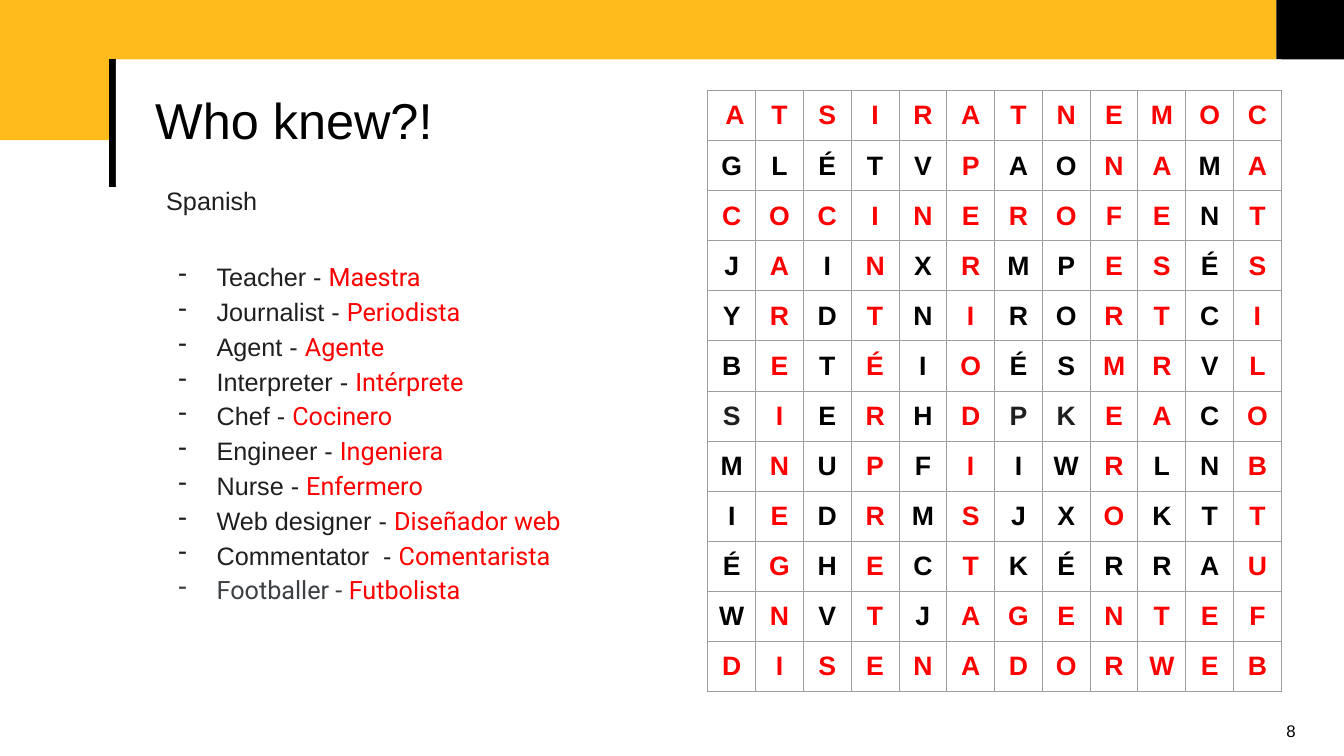
from lxml import etree
from pptx import Presentation
from pptx.dml.color import RGBColor
from pptx.enum.shapes import MSO_CONNECTOR, MSO_SHAPE
from pptx.enum.text import MSO_ANCHOR, PP_ALIGN
from pptx.oxml import parse_xml
from pptx.oxml.ns import nsdecls, qn
from pptx.util import Inches, Pt

RECT = MSO_SHAPE.RECTANGLE
MIDDLE, CENTER, LEFT = MSO_ANCHOR.MIDDLE, PP_ALIGN.CENTER, PP_ALIGN.LEFT
COLORS = {"yellow": "FFBB1C", "black": "000000", "white": "FFFFFF", "red": "FF0000",
          "ink": "1F1F1F", "gray": "3C4043", "grid": "9E9E9E"}

prs = Presentation()
prs.slide_width, prs.slide_height = Inches(13.33), Inches(7.5)
s = prs.slides.add_slide(prs.slide_layouts[6])


def add_text(p, text, size=18, color="black", font="Arial", bold=False):
    r = p.add_run()
    r.text = text
    r.font.size, r.font.name, r.font.bold = Pt(size), font, bold
    r.font.color.rgb = RGBColor.from_string(COLORS[color])


def add_rect(x, y, w, h, color):
    sp = s.shapes.add_shape(RECT, Inches(x), Inches(y), Inches(w), Inches(h))
    sp.shadow.inherit = False
    sp.fill.solid()
    sp.fill.fore_color.rgb = RGBColor.from_string(COLORS[color])
    sp.line.fill.background()
    return sp


# Header band, accent line and corner
add_rect(0, 0, 12.66, 1.39, "yellow")
accent = s.shapes.add_connector(MSO_CONNECTOR.STRAIGHT, Inches(1.12), Inches(0.59),
                                Inches(1.12), Inches(1.86))
accent.line.width = Pt(5)
accent.line.color.rgb = RGBColor.from_string(COLORS["black"])
etree.SubElement(accent._element.spPr, qn("a:effectLst"))
add_rect(12.66, 0, 0.67, 0.59, "black")

# Title
tf = add_rect(1.15, 0.59, 11.56, 1.26, "white").text_frame
tf.word_wrap, tf.vertical_anchor = True, MIDDLE
tf.margin_left = Inches(0.39)
p = tf.paragraphs[0]
p.alignment, p.line_spacing = LEFT, 0.9
add_text(p, "Who knew?!", size=36)

# Slide number
tf = s.shapes.add_textbox(Inches(12.66), Inches(7.1), Inches(0.41), Inches(0.4)).text_frame
tf.word_wrap = True
add_text(tf.paragraphs[0], "8", size=12)

# Word search: letters, then each hidden word as row, column, row step, column step, length
letters = ["ATSIRATNEMOC", "GLÉTVPAONAMA", "COCINEROFENT", "JAINXRMPESÉS",
           "YRDTNIRORTCI", "BETÉIOÉSMRVL", "SIERHDPKEACO", "MNUPFIIWRLNB",
           "IEDRMSJXOKTT", "ÉGHECTKÉRRAU", "WNVTJAGENTEF", "DISENADORWEB"]
hidden_words = [(0, 9, 1, 0, 7), (1, 5, 1, 0, 10), (10, 5, 0, 1, 6), (2, 3, 1, 0, 10),
                (2, 0, 0, 1, 8), (11, 1, -1, 0, 9), (0, 8, 1, 0, 9), (11, 0, 0, 1, 12),
                (0, 11, 0, -1, 12), (10, 11, -1, 0, 10)]
found = {(row + i * dr, col + i * dc)
         for row, col, dr, dc, length in hidden_words for i in range(length)}
found |= {(2, 1)}
ink_cells = {(6, 0), (6, 6), (6, 7)}

n = len(letters)
grid = s.shapes.add_table(n, n, Inches(7.02), Inches(0.9), Inches(5.69), Inches(5.91)).table
grid.first_row = grid.horz_banding = False
for i in range(n):
    grid.columns[i].width = Inches(5.69 / n)
    grid.rows[i].height = Inches(5.91 / n)
for row, line in enumerate(letters):
    for col, letter in enumerate(line):
        cell = grid.cell(row, col)
        cell.margin_left = cell.margin_right = Inches(0.1)
        cell.margin_top = cell.margin_bottom = Inches(0.09)
        cell.vertical_anchor = MIDDLE
        for side in ("lnL", "lnR", "lnT", "lnB"):
            cell._tc.get_or_add_tcPr().append(parse_xml(
                f'<a:{side} {nsdecls("a")} w="{Pt(0.75)}"><a:solidFill>'
                f'<a:srgbClr val="{COLORS["grid"]}"/></a:solidFill></a:{side}>'))
        cell.fill.background()
        color = ("red" if (row, col) in found else
                 "ink" if (row, col) in ink_cells else "black")
        p = cell.text_frame.paragraphs[0]
        p.alignment = CENTER
        add_text(p, " A" if row == col == 0 else letter, size=19, color=color, bold=True)

# Vocabulary list
vocabulary = [("Teacher - ", "Maestra"), ("Journalist - ", "Periodista"),
              ("Agent - ", "Agente"), ("Interpreter - ", "Intérprete"),
              ("Chef - ", "Cocinero"), ("Engineer - ", "Ingeniera"),
              ("Nurse - ", "Enfermero"), ("Web designer - ", "Diseñador web"),
              ("Commentator  - ", "Comentarista"), ("Footballer - ", "Futbolista")]
tf = s.shapes.add_textbox(Inches(1.55), Inches(1.69), Inches(4.15), Inches(4.42)).text_frame
tf.word_wrap = True
tf.margin_left = tf.margin_right = tf.margin_top = tf.margin_bottom = Inches(0.1)
p = tf.paragraphs[0]
p.line_spacing = 1.15
add_text(p, "Spanish", color="ink")
for i, (english, spanish) in enumerate(vocabulary):
    last = i == len(vocabulary) - 1
    color, font = ("gray", "Roboto") if last else ("ink", "Arial")
    p = tf.add_paragraph()
    pPr = p._p.get_or_add_pPr()
    pPr.set("marL", str(Inches(0.5)))
    pPr.set("indent", str(Inches(-0.38)))
    bullet_color = etree.SubElement(pPr, qn("a:buClr"))
    etree.SubElement(bullet_color, qn("a:srgbClr"), val=COLORS[color])
    etree.SubElement(pPr, qn("a:buChar"), char="-")
    p.line_spacing = 1.15
    p.space_before = Pt(30 if i == 0 else 0)
    add_text(p, english, color=color, font=font)
    add_text(p, spanish, color="red", font="Roboto")

prs.save("out.pptx")
